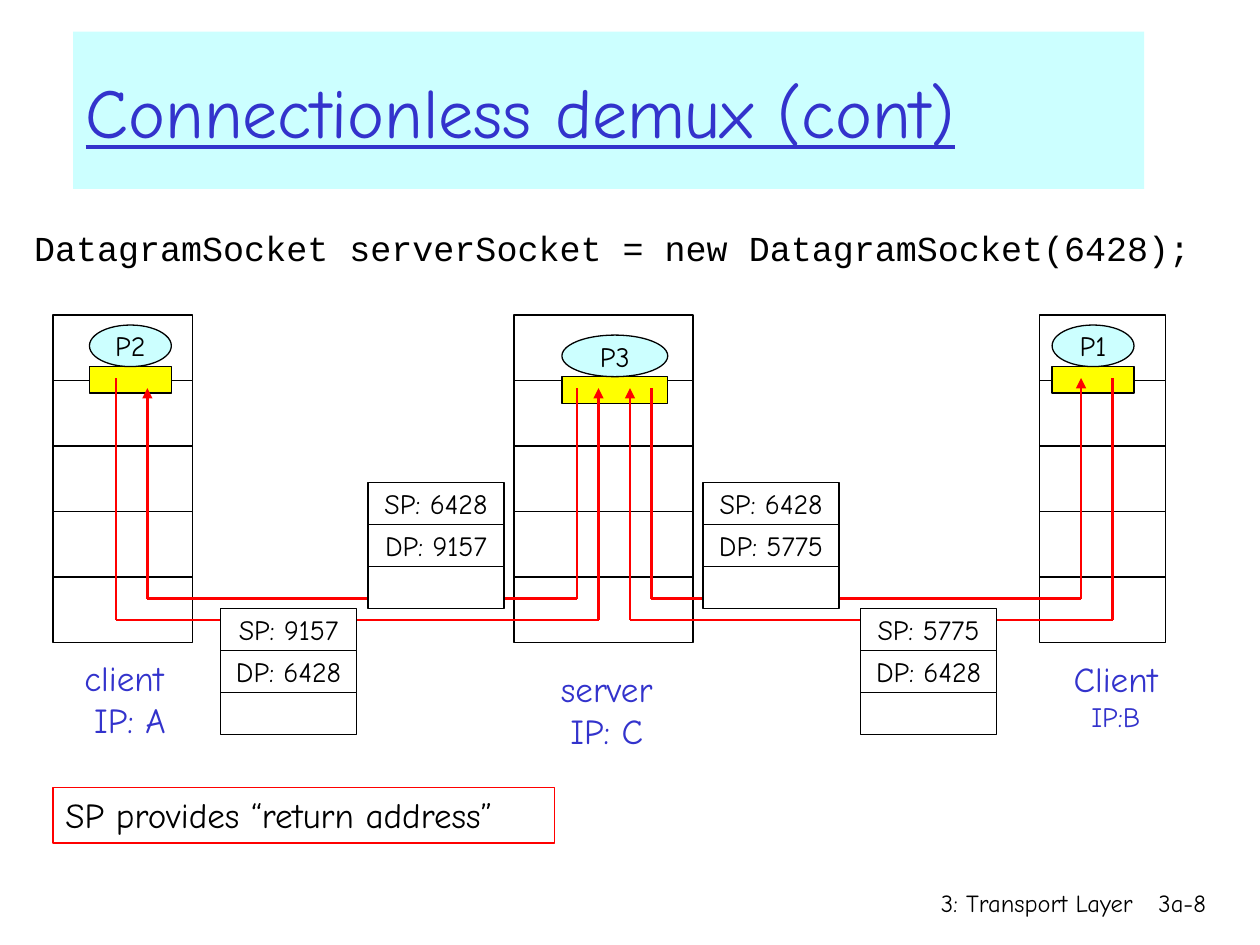
from lxml import etree
from pptx import Presentation
from pptx import util as u
from pptx.dml.color import RGBColor
from pptx.enum import shapes, text
from pptx.oxml.ns import qn

COLORS = {"ink": "000000", "blue": "3333CC", "pale": "CCFFFF",
          "yellow": "FFFF00", "red": "FF0000", "white": "FFFFFF"}
HAND, CODE = "Comic Neue", "Courier New"
ALIGN = text.PP_ALIGN
RECT, OVAL = shapes.MSO_SHAPE.RECTANGLE, shapes.MSO_SHAPE.OVAL


def color(name):
    """Return the named colour."""
    return RGBColor.from_string(COLORS[name])


def inches(box):
    """Turn a box or point given in inches into lengths."""
    return [u.Inches(value) for value in box]


def write(shape, lines, sizes, ink="ink", font=HAND, align=ALIGN.LEFT,
          anchor=text.MSO_ANCHOR.TOP, wrap=True):
    """Fill a shape with lines of text, each in its own size."""
    frame = shape.text_frame
    frame.text = "\n".join(lines)
    frame.word_wrap = wrap
    frame.auto_size = text.MSO_AUTO_SIZE.NONE
    frame.vertical_anchor = anchor
    for para, size in zip(frame.paragraphs, sizes):
        para.alignment = align
        for span in para.runs:
            span.font.name = font
            span.font.size = u.Pt(size)
            span.font.color.rgb = color(ink)


def add_label(page, box, lines, sizes, ink="ink", align=ALIGN.CENTER, wrap=False):
    """Add a plain text box."""
    write(page.shapes.add_textbox(*inches(box)), lines, sizes, ink,
          align=align, wrap=wrap)


def add_block(page, box, fill="white", kind=RECT, label=""):
    """Add a thinly outlined shape, with a centred label if one is given."""
    block = page.shapes.add_shape(kind, *inches(box))
    block.shadow.inherit = False
    block.fill.solid()
    block.fill.fore_color.rgb = color(fill)
    block.line.color.rgb = color("ink")
    block.line.width = u.Pt(0.75)
    if label:
        write(block, [label], [16], align=ALIGN.CENTER,
              anchor=text.MSO_ANCHOR.MIDDLE, wrap=False)


def add_stack(page, box, labels):
    """Divide a box into equal rows, one for each label."""
    left, top, width, height = box
    row = height / len(labels)
    for index, label in enumerate(labels):
        add_block(page, (left, top + index * row, width, row), label=label)


def add_host(page, box, process, process_box, label_box, lines, sizes):
    """Add a host: its five layers, a process on its socket, and its name."""
    add_stack(page, box, [""] * 5)
    left, top, width, height = process_box
    add_block(page, (left, top + height, width, 0.21), "yellow")
    add_block(page, process_box, "pale", OVAL, process)
    add_label(page, label_box, lines, sizes, "blue")


def add_route(page, points):
    """Join the points with red lines, the last ending in an arrowhead."""
    for start, end in zip(points, points[1:]):
        line = page.shapes.add_connector(
            shapes.MSO_CONNECTOR.STRAIGHT, *inches(start + end))
        line.line.color.rgb = color("red")
        line.line.width = u.Pt(1.5)
        properties = line._element.spPr
        etree.SubElement(properties, qn("a:effectLst"))
        if end == points[-1]:
            etree.SubElement(properties.find(qn("a:ln")), qn("a:tailEnd"),
                             type="triangle")


def add_heading(page, box):
    """Fill the title placeholder."""
    title = page.shapes.title
    title.left, title.top, title.width, title.height = inches(box)
    title.fill.solid()
    title.fill.fore_color.rgb = color("pale")
    write(title, ["Connectionless demux (cont)"], [40], "blue",
          anchor=text.MSO_ANCHOR.MIDDLE)
    title.text_frame.paragraphs[0].runs[0].font.underline = True


def add_code(page, box):
    """Fill the body placeholder with the line of code."""
    body = page.placeholders[1]
    body.left, body.top, body.width, body.height = inches(box)
    write(body, ["DatagramSocket serverSocket = new DatagramSocket(6428);"],
          [20], font=CODE)
    layout = body.text_frame.paragraphs[0]._p.get_or_add_pPr()
    layout.set("marL", str(u.Inches(0.38)))
    layout.set("indent", str(u.Inches(-0.38)))
    etree.SubElement(layout, qn("a:buNone"))


def add_note(page, box):
    """Add the red-framed remark."""
    note = page.shapes.add_textbox(*inches(box))
    note.line.color.rgb = color("red")
    note.line.width = u.Pt(0.75)
    write(note, ["SP provides “return address”"], [20], wrap=False)


def add_diagram(page):
    """Draw the hosts, the routes between them and the packets on the way."""
    top, height = 2.5, 2.6
    add_host(page, (0.42, top, 1.11, height), "P2", (0.71, 2.58, 0.65, 0.33),
             (0.51, 5.16, 0.95, 0.77), ["client", " IP: A"], [20, 20])
    add_host(page, (8.25, top, 1, height), "P1", (8.35, 2.58, 0.65, 0.33),
             (8.38, 5.17, 0.95, 0.7), ["Client", "IP:B"], [20, 16])
    add_host(page, (4.08, top, 1.42, height), "P3", (4.46, 2.66, 0.84, 0.33),
             (4.29, 5.25, 1.05, 0.77), ["server", "IP: C"], [20, 20])

    reply, request = 4.75, 4.92
    for start, end, level in (
            ((0.92, 3), (4.75, 3.08), request),
            ((4.58, 3.08), (1.17, 3.08), reply),
            ((8.83, 3), (5, 3.08), request),
            ((5.17, 3.08), (8.58, 3), reply)):
        add_route(page, [start, (start[0], level), (end[0], level), end])

    for left, top, source, target in (
            (2.92, 3.83, 6428, 9157), (1.75, 4.83, 9157, 6428),
            (5.58, 3.83, 6428, 5775), (6.83, 4.83, 5775, 6428)):
        add_stack(page, (left, top, 1.08, 1),
                  [f"SP: {source}", f"DP: {target}", ""])


def add_footer(page):
    """Add the chapter name and the page number."""
    for box, words in (((5.92, 7, 3.17, 0.5), "3: Transport Layer"),
                       ((8.93, 7, 0.74, 0.5), "3a-8")):
        add_label(page, box, [words], [14], align=ALIGN.RIGHT, wrap=True)


def main():
    """Build and save the slide."""
    deck = Presentation()
    deck.slide_width, deck.slide_height = inches((10, 7.5))
    page = deck.slides.add_slide(deck.slide_layouts[1])
    add_heading(page, (0.58, 0.25, 8.5, 1.25))
    add_code(page, (0.17, 1.75, 9.5, 0.67))
    add_diagram(page)
    add_note(page, (0.42, 6.25, 3.98, 0.44))
    add_footer(page)
    deck.save("out.pptx")


if __name__ == "__main__":
    main()
